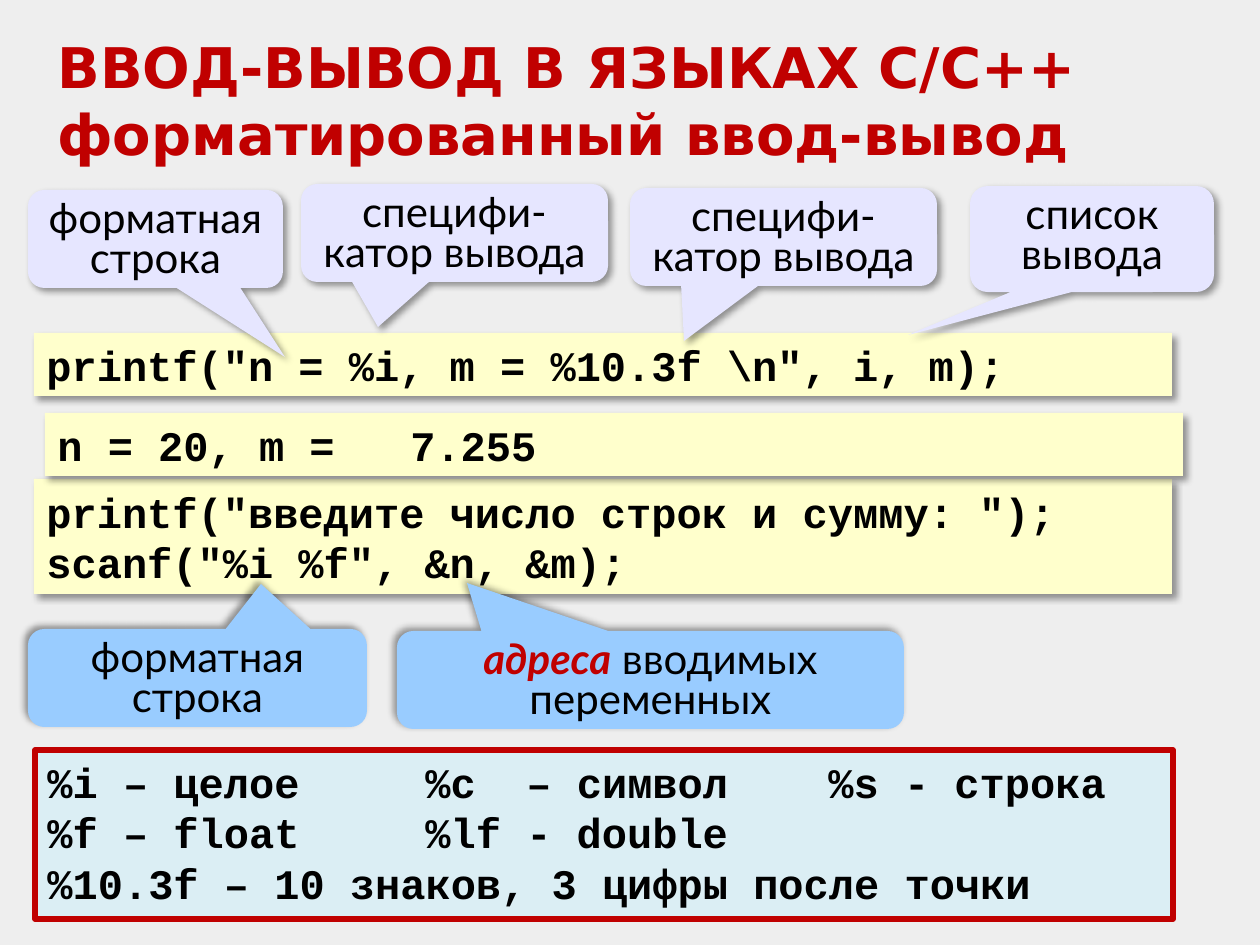
from lxml import etree
from pptx import Presentation
from pptx.dml.color import RGBColor
from pptx.enum.shapes import MSO_SHAPE
from pptx.enum.text import MSO_ANCHOR, PP_ALIGN
from pptx.oxml.ns import qn
from pptx.util import Pt

RECT = MSO_SHAPE.RECTANGLE
PROCESS = MSO_SHAPE.FLOWCHART_PROCESS
CALLOUT = MSO_SHAPE.ROUNDED_RECTANGULAR_CALLOUT
TOP, MIDDLE = MSO_ANCHOR.TOP, MSO_ANCHOR.MIDDLE
LEFT, CENTER = PP_ALIGN.LEFT, PP_ALIGN.CENTER

PX = 914400 / 126
COLORS = {
    "background": "EEEEEE", "accent": "C00000", "text": "000000",
    "code": "FFFFCC", "output_note": "E6E6FF", "input_note": "99CCFF",
    "legend": "DBEEF4",
}
MONO, SANS, TITLE_FONT = "Courier New", "Lato", "DejaVu Sans"

TITLE = "ВВОД-ВЫВОД В ЯЗЫКАХ C/C++ форматированный ввод-вывод"
TITLE_BOX = (45, 26, 1169, 149)

CODE_WIDTH = 1138
# left, top, height, lines
CODE = [
    (34, 333, 63, ['printf("n = %i, m = %10.3f \\n", i, m);']),
    (34, 479, 115, ['printf("введите число строк и сумму: ");',
                    'scanf("%i %f", &n, &m);']),
    (45, 413, 63, ["n = 20, m =   7.255"]),
]

# emphasised start, rest, box, pointer tip
OUTPUT_NOTES = [
    ("", "специфи-катор вывода", (301, 184, 307, 98), (378, 327)),
    ("", "форматная строка", (28, 190, 255, 98), (285, 357)),
    ("", "список вывода", (970, 186, 244, 106), (908, 335)),
    ("", "специфи-катор вывода", (630, 188, 307, 98), (684, 341)),
]
INPUT_NOTES = [
    ("", "форматная строка", (28, 629, 339, 98), (261, 584)),
    ("адреса", " вводимых переменных", (397, 631, 507, 98), (467, 583)),
]

LEGEND = [
    "%i – целое\t%c\t– символ\t%s - строка",
    "%f – float\t%lf - double",
    "%10.3f – 10 знаков, 3 цифры после точки",
]
LEGEND_BOX = (35, 750, 1138, 169)
LEGEND_TABS = (378, 479, 781)


def emu(px):
    return round(px * PX)


def rgb(name):
    return RGBColor.from_string(COLORS[name])


def style(run, font, size=24, color="text", bold=False, italic=False):
    run.font.name = font
    run.font.size = Pt(size)
    run.font.color.rgb = rgb(color)
    run.font.bold = bold
    run.font.italic = italic


def add_box(slide, kind, box, fill, anchor):
    shape = slide.shapes.add_shape(kind, *map(emu, box))
    shape.fill.solid()
    shape.fill.fore_color.rgb = rgb(fill)
    shape.line.fill.background()
    shape.shadow.inherit = False
    shape.text_frame.word_wrap = True
    shape.text_frame.vertical_anchor = anchor
    return shape


def cast_shadow(shape, degrees):
    effects = shape._element.spPr.find(qn("a:effectLst"))
    shadow = etree.SubElement(
        effects, qn("a:outerShdw"), blurRad=str(Pt(4)), dist=str(Pt(3)),
        dir=str(degrees * 60000), algn="ctr", rotWithShape="0")
    color = etree.SubElement(shadow, qn("a:srgbClr"), val="000000")
    etree.SubElement(color, qn("a:alpha"), val="40000")


def write_lines(shape, lines):
    shape.text_frame.text = "\n".join(lines)
    for paragraph in shape.text_frame.paragraphs:
        paragraph.alignment = LEFT
        for run in paragraph.runs:
            style(run, MONO, bold=True)


def set_tabs(paragraph, stops):
    tabs = etree.SubElement(paragraph._p.get_or_add_pPr(), qn("a:tabLst"))
    for stop in stops:
        etree.SubElement(tabs, qn("a:tab"), pos=str(emu(stop)), algn="l")


def add_note(slide, note, fill, shadow_degrees):
    emphasis, rest, box, tip = note
    left, top, width, height = box
    shape = add_box(slide, CALLOUT, box, fill, TOP)
    cast_shadow(shape, shadow_degrees)
    # The pointer is set as an offset from the centre, in box sizes
    shape.adjustments[0] = (tip[0] - left - width / 2) / width
    shape.adjustments[1] = (tip[1] - top - height / 2) / height
    paragraph = shape.text_frame.paragraphs[0]
    paragraph.alignment = CENTER
    paragraph.line_spacing = 0.8
    if emphasis:
        run = paragraph.add_run()
        run.text = emphasis
        style(run, SANS, color="accent", bold=True, italic=True)
    run = paragraph.add_run()
    run.text = rest
    style(run, SANS)


def add_title(slide):
    frame = slide.shapes.add_textbox(*map(emu, TITLE_BOX)).text_frame
    frame.word_wrap = True
    frame.text = TITLE
    style(frame.paragraphs[0].runs[0], TITLE_FONT, 32, "accent", bold=True)


def add_legend(slide):
    shape = add_box(slide, PROCESS, LEGEND_BOX, "legend", TOP)
    shape.line.color.rgb = rgb("accent")
    shape.line.width = Pt(3)
    write_lines(shape, LEGEND)
    for paragraph in shape.text_frame.paragraphs:
        set_tabs(paragraph, LEGEND_TABS)


def main():
    deck = Presentation()
    deck.slide_width, deck.slide_height = emu(1260), emu(945)
    slide = deck.slides.add_slide(deck.slide_layouts[6])
    slide.background.fill.solid()
    slide.background.fill.fore_color.rgb = rgb("background")

    add_title(slide)
    for left, top, height, lines in CODE:
        shape = add_box(slide, RECT, (left, top, CODE_WIDTH, height), "code", MIDDLE)
        cast_shadow(shape, 45)
        write_lines(shape, lines)
    for note in OUTPUT_NOTES:
        add_note(slide, note, "output_note", 45)
    for note in INPUT_NOTES:
        add_note(slide, note, "input_note", 225)
    add_legend(slide)
    deck.save("out.pptx")


if __name__ == "__main__":
    main()
